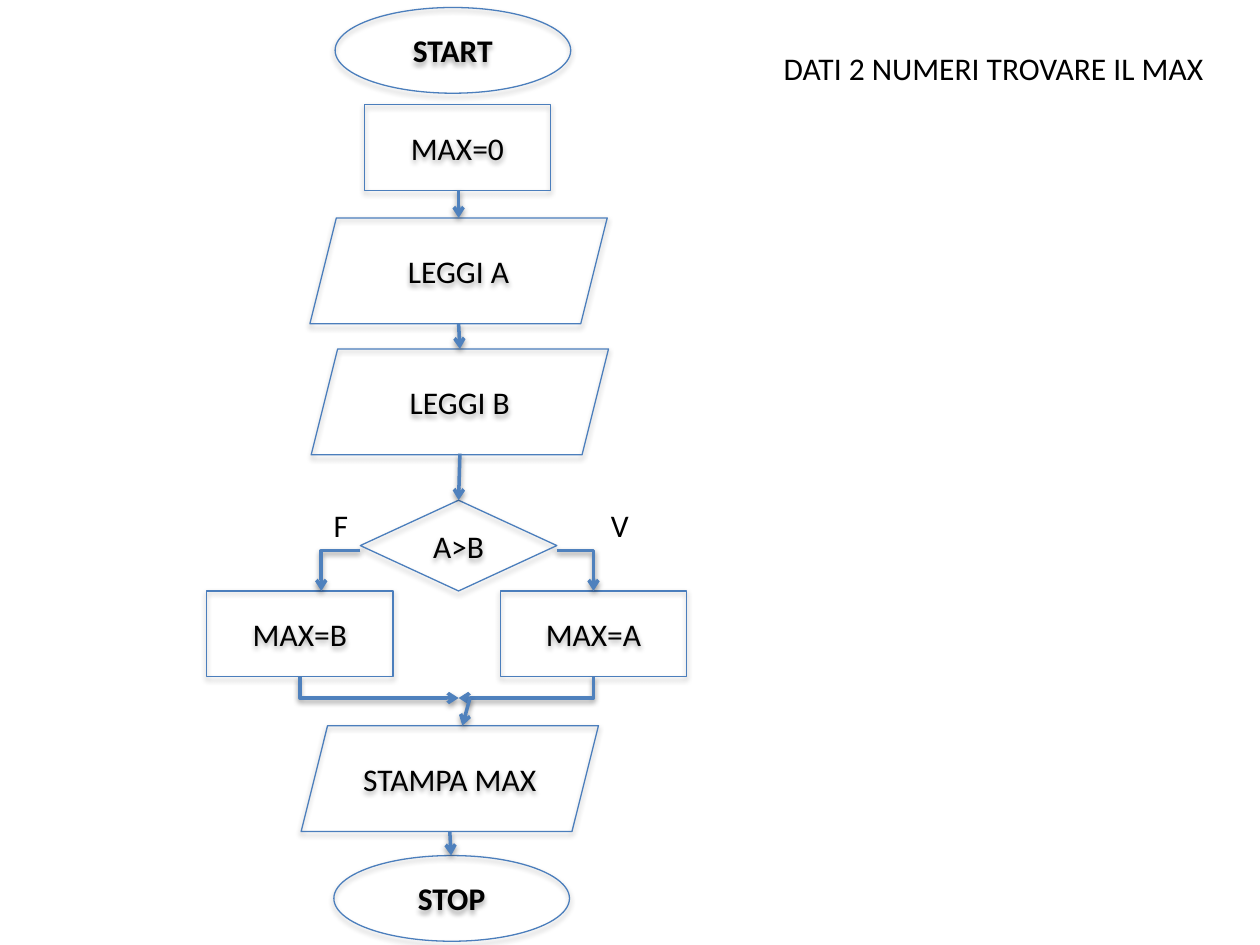
"""Draw a flowchart that finds the larger of two numbers."""
from dataclasses import dataclass

from pptx import Presentation
from pptx.dml.color import RGBColor
from pptx.enum.shapes import MSO_CONNECTOR, MSO_SHAPE
from pptx.enum.text import MSO_ANCHOR, MSO_AUTO_SIZE, PP_ALIGN
from pptx.oxml import parse_xml
from pptx.oxml.ns import nsdecls
from pptx.shapes.autoshape import Shape
from pptx.shapes.connector import Connector
from pptx.slide import Slide
from pptx.util import Inches, Pt

OVAL = MSO_SHAPE.OVAL
RECT = MSO_SHAPE.RECTANGLE
SLANT = MSO_SHAPE.PARALLELOGRAM
DIAMOND = MSO_SHAPE.DIAMOND
STRAIGHT = MSO_CONNECTOR.STRAIGHT
ELBOW = MSO_CONNECTOR.ELBOW
LEFT, CENTER = PP_ALIGN.LEFT, PP_ALIGN.CENTER
TOP, MIDDLE = MSO_ANCHOR.TOP, MSO_ANCHOR.MIDDLE
FIT = MSO_AUTO_SIZE.SHAPE_TO_FIT_TEXT

BLACK = RGBColor(0x00, 0x00, 0x00)
EDGE = RGBColor(0x4B, 0x7E, 0xBC)
BLUE = RGBColor(0x4F, 0x81, 0xBD)
FONT = "Calibri"

SIZES = {OVAL: (1.87, 0.68), RECT: (1.48, 0.68),
         SLANT: (2.36, 0.84), DIAMOND: (1.56, 0.72)}


@dataclass
class Node:
    kind: MSO_SHAPE
    text: str
    x: float
    y: float


@dataclass
class Arrow:
    x1: float
    y1: float
    x2: float
    y2: float


@dataclass
class Label:
    text: str
    x: float
    y: float
    w: float


NODES = [
    Node(OVAL, "START", 2.66, 0.06),
    Node(RECT, "MAX=0", 2.89, 0.83),
    Node(SLANT, "LEGGI A", 2.46, 1.73),
    Node(SLANT, "LEGGI B", 2.47, 2.77),
    Node(DIAMOND, "A>B", 2.86, 3.97),
    Node(RECT, "MAX=B", 1.64, 4.69),
    Node(RECT, "MAX=A", 3.97, 4.69),
    Node(SLANT, "STAMPA MAX", 2.39, 5.76),
    Node(OVAL, "STOP", 2.65, 6.79),
]
DIRECT = [
    Arrow(3.64, 1.51, 3.64, 1.73),
    Arrow(3.64, 2.57, 3.65, 2.77),
    Arrow(3.65, 3.6, 3.64, 3.97),
    Arrow(3.73, 5.54, 3.67, 5.76),
    Arrow(3.57, 6.6, 3.58, 6.79),
]
SPLITS = [Arrow(2.86, 4.37, 2.55, 4.69), Arrow(4.42, 4.37, 4.71, 4.69)]
JOINS = [Arrow(2.38, 5.37, 3.64, 5.54), Arrow(4.71, 5.37, 3.64, 5.54)]
LABELS = [Label("F", 2.55, 3.97, 0.32), Label("V", 4.75, 3.97, 0.35)]
TITLE = Label("DATI 2 NUMERI TROVARE IL MAX", 6.12, 0.34, 3.57)


def shade(item: Shape | Connector, dist: float, alpha: int) -> None:
    """Give the item a soft shadow straight below it."""
    item._element.spPr.append(parse_xml(
        f'<a:effectLst {nsdecls("a")}><a:outerShdw blurRad="{Pt(3.15)}" '
        f'dist="{Pt(dist)}" dir="5400000" rotWithShape="0">'
        f'<a:srgbClr val="{BLACK}"><a:alpha val="{alpha * 1000}"/>'
        '</a:srgbClr></a:outerShdw></a:effectLst>'))


def write(shape: Shape, text: str, align: PP_ALIGN, anchor: MSO_ANCHOR,
          bold: bool = False) -> None:
    """Put one run of text in the shape."""
    frame = shape.text_frame
    frame.vertical_anchor = anchor
    para = frame.paragraphs[0]
    para.alignment = align
    run = para.add_run()
    run.text = text
    font = run.font
    font.name, font.size, font.bold = FONT, Pt(18), bold
    font.color.rgb = BLACK


def draw_node(slide: Slide, node: Node) -> None:
    """Draw one step of the chart."""
    box = map(Inches, (node.x, node.y, *SIZES[node.kind]))
    shape = slide.shapes.add_shape(node.kind, *box)
    shape.fill.background()
    shape.line.color.rgb = EDGE
    shape.line.width = Pt(0.75)
    shade(shape, 1.8, 35)
    write(shape, node.text, CENTER, MIDDLE, node.kind == OVAL)


def draw_arrow(slide: Slide, arrow: Arrow, kind: MSO_CONNECTOR) -> Connector:
    """Draw a line with an arrowhead at its end."""
    ends = map(Inches, (arrow.x1, arrow.y1, arrow.x2, arrow.y2))
    link = slide.shapes.add_connector(kind, *ends)
    link.line.color.rgb = BLUE
    link.line.width = Pt(2)
    link.line._get_or_add_ln().append(
        parse_xml(f'<a:tailEnd {nsdecls("a")} type="arrow"/>'))
    shade(link, 1.6, 38)
    return link


def draw_split(slide: Slide, arrow: Arrow) -> Connector:
    """Draw an arrow that runs sideways, then down."""
    link = draw_arrow(slide, arrow, ELBOW)
    link._element.spPr.prstGeom.set("prst", "bentConnector2")
    return link


def draw_join(slide: Slide, arrow: Arrow) -> None:
    """Draw an arrow that runs down, then sideways, by a quarter turn."""
    mid_x, mid_y = (arrow.x1 + arrow.x2) / 2, (arrow.y1 + arrow.y2) / 2
    half_x, half_y = (arrow.x2 - arrow.x1) / 2, (arrow.y2 - arrow.y1) / 2
    right = half_x > 0
    dx, dy = (half_y if right else -half_y), abs(half_x)
    link = draw_split(
        slide, Arrow(mid_x + dx, mid_y - dy, mid_x - dx, mid_y + dy))
    turn = 270 if right else 90
    link._element.spPr.xfrm.set("rot", str(turn * 60000))


def set_label(shape: Shape, label: Label) -> None:
    """Place and fill a box of plain text."""
    shape.left, shape.top = Inches(label.x), Inches(label.y)
    shape.width, shape.height = Inches(label.w), Inches(0.4)
    shape.text_frame.word_wrap = False
    shape.text_frame.auto_size = FIT
    write(shape, label.text, LEFT, TOP)


def main() -> None:
    """Build and save the slide."""
    deck = Presentation()
    deck.slide_width, deck.slide_height = Inches(10), Inches(7.5)
    slide = deck.slides.add_slide(deck.slide_layouts[5])
    set_label(slide.shapes.title, TITLE)
    for node in NODES:
        draw_node(slide, node)
    for arrow in SPLITS:
        draw_split(slide, arrow)
    for arrow in JOINS:
        draw_join(slide, arrow)
    for arrow in DIRECT:
        draw_arrow(slide, arrow, STRAIGHT)
    for label in LABELS:
        set_label(slide.shapes.add_textbox(0, 0, 0, 0), label)
    deck.save("out.pptx")


if __name__ == "__main__":
    main()
